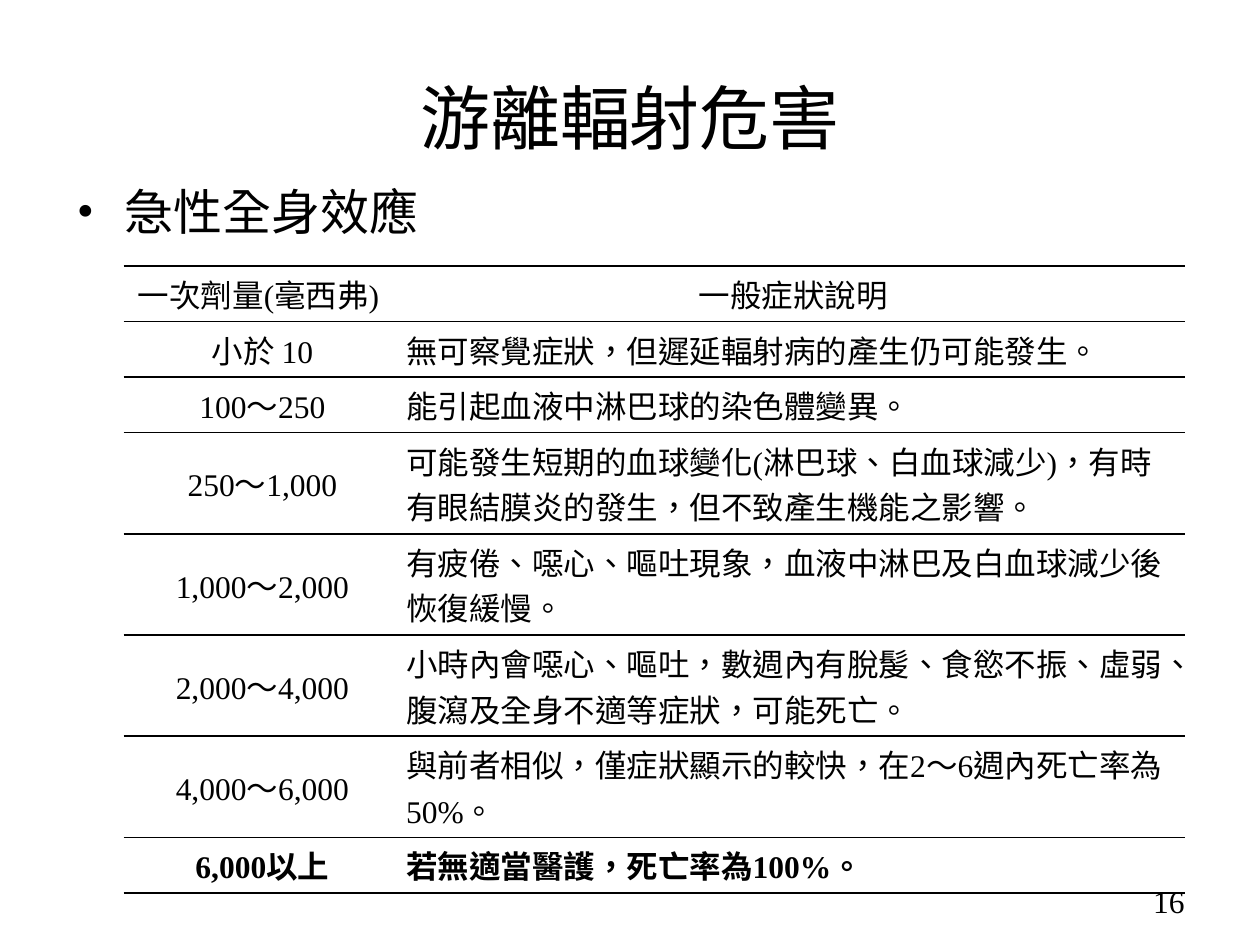
import pptx
import pptx.util
import pptx.dml.color
import pptx.enum.lang
import pptx.enum.text
import pptx.oxml
import pptx.oxml.ns
import lxml.etree

Cm, Pt = pptx.util.Cm, pptx.util.Pt
ALIGN = pptx.enum.text.PP_ALIGN
ANCHOR = pptx.enum.text.MSO_ANCHOR
TONGUE = pptx.enum.lang.MSO_LANGUAGE_ID.TRADITIONAL_CHINESE
FACE = "Times New Roman"
INK = "000000"
SHORT, TALL = 1.12, 2.04
ROWS = [
    ("一次劑量(毫西弗) ", "一般症狀說明", SHORT),
    ("小於 10", "無可察覺症狀，但遲延輻射病的產生仍可能發生。", SHORT),
    ("100〜250", "能引起血液中淋巴球的染色體變異。", SHORT),
    ("250〜1,000",
     "可能發生短期的血球變化(淋巴球、白血球減少)，有時有眼結膜炎的發生，但不致產生機能之影響。", TALL),
    ("1,000〜2,000", "有疲倦、噁心、嘔吐現象，血液中淋巴及白血球減少後恢復緩慢。", TALL),
    ("2,000〜4,000",
     "小時內會噁心、嘔吐，數週內有脫髲、食慾不振、虛弱、腹瀉及全身不適等症狀，可能死亡。", TALL),
    ("4,000〜6,000", "與前者相似，僅症狀顯示的較快，在2〜6週內死亡率為50%。", TALL),
    ("6,000以上", "若無適當醫護，死亡率為100%。", SHORT),
]


def color(text):
    """Turn a hex string into a colour."""
    return pptx.dml.color.RGBColor.from_string(text)


def apply(item, form):
    """Set each format value on the item."""
    for name, value in form.items():
        setattr(item, name, value)


def write(para, text, size, bold=False, **form):
    """Put one styled run in a paragraph."""
    run = para.add_run()
    run.text = text
    apply(run.font, {"name": FACE, "size": Pt(size), "bold": bold,
                     "language_id": TONGUE})
    run.font.color.rgb = color(INK)
    apply(para, form)


def add_text(slide, place, text, size, anchor, **form):
    """Add a text box with one paragraph and return the paragraph."""
    frame = slide.shapes.add_textbox(*map(Cm, place)).text_frame
    apply(frame, {"word_wrap": True, "vertical_anchor": anchor})
    para = frame.paragraphs[0]
    write(para, text, size, **form)
    return para


def add_bullet(para, indent):
    """Give a paragraph a hanging bullet."""
    props = para._p.get_or_add_pPr()
    props.set("marL", str(Cm(indent)))
    props.set("indent", str(-Cm(indent)))
    for tag, name, value in (("a:buFont", "typeface", FACE), ("a:buChar", "char", "•")):
        lxml.etree.SubElement(props, pptx.oxml.ns.qn(tag)).set(name, value)


def rule_cell(cell):
    """Draw lines above and below a cell and none at its sides."""
    props = cell._tc.get_or_add_tcPr()
    solid = f'<a:solidFill><a:srgbClr val="{INK}"/></a:solidFill>'
    for side, paint in zip("LRTB", ["<a:noFill/>"] * 2 + [solid] * 2):
        props.append(pptx.oxml.parse_xml(
            f'<a:ln{side} {pptx.oxml.ns.nsdecls("a")} w="{Pt(1)}">{paint}</a:ln{side}>'))


def fill_cell(cell, text, align, bold):
    """Style one table cell and write its text."""
    edges = ("left", "right", "top", "bottom")
    apply(cell, {f"margin_{edge}": Cm(0.1) for edge in edges})
    cell.vertical_anchor = ANCHOR.MIDDLE
    rule_cell(cell)
    cell.fill.background()
    write(cell.text_frame.paragraphs[0], text, 18, bold, alignment=align,
          space_before=Pt(6), space_after=Pt(6))


def add_doses(slide):
    """Add the table of doses and symptoms."""
    high = sum(row[2] for row in ROWS)
    table = slide.shapes.add_table(
        len(ROWS), 2, *map(Cm, (2.49, 5.36, 21.4, high))).table
    apply(table, {"first_row": False, "horz_banding": False})
    for column, width in zip(table.columns, (5.6, 15.8)):
        column.width = Cm(width)
    last = len(ROWS) - 1
    for index, (dose, signs, tall) in enumerate(ROWS):
        table.rows[index].height = Cm(tall)
        aligns = (ALIGN.CENTER, ALIGN.LEFT if index else ALIGN.CENTER)
        for side, text in enumerate((dose, signs)):
            fill_cell(table.cell(index, side), text, aligns[side], index == last)


def main():
    """Build the slide and save it."""
    deck = pptx.Presentation()
    apply(deck, {"slide_width": Cm(25.4), "slide_height": Cm(19.05)})
    slide = deck.slides.add_slide(deck.slide_layouts[6])
    add_text(slide, (1.27, 0.76, 22.86, 3.18), "游離輻射危害", 40,
             ANCHOR.MIDDLE, alignment=ALIGN.CENTER)
    para = add_text(slide, (1.3, 3.53, 22.86, 12.57), "急性全身效應", 28,
                    ANCHOR.TOP, space_before=Pt(5.6))
    add_bullet(para, 0.96)
    add_text(slide, (18.2, 17.65, 5.93, 1.02), "16", 18,
             ANCHOR.MIDDLE, alignment=ALIGN.RIGHT)
    add_doses(slide)
    deck.save("out.pptx")


if __name__ == "__main__":
    main()
